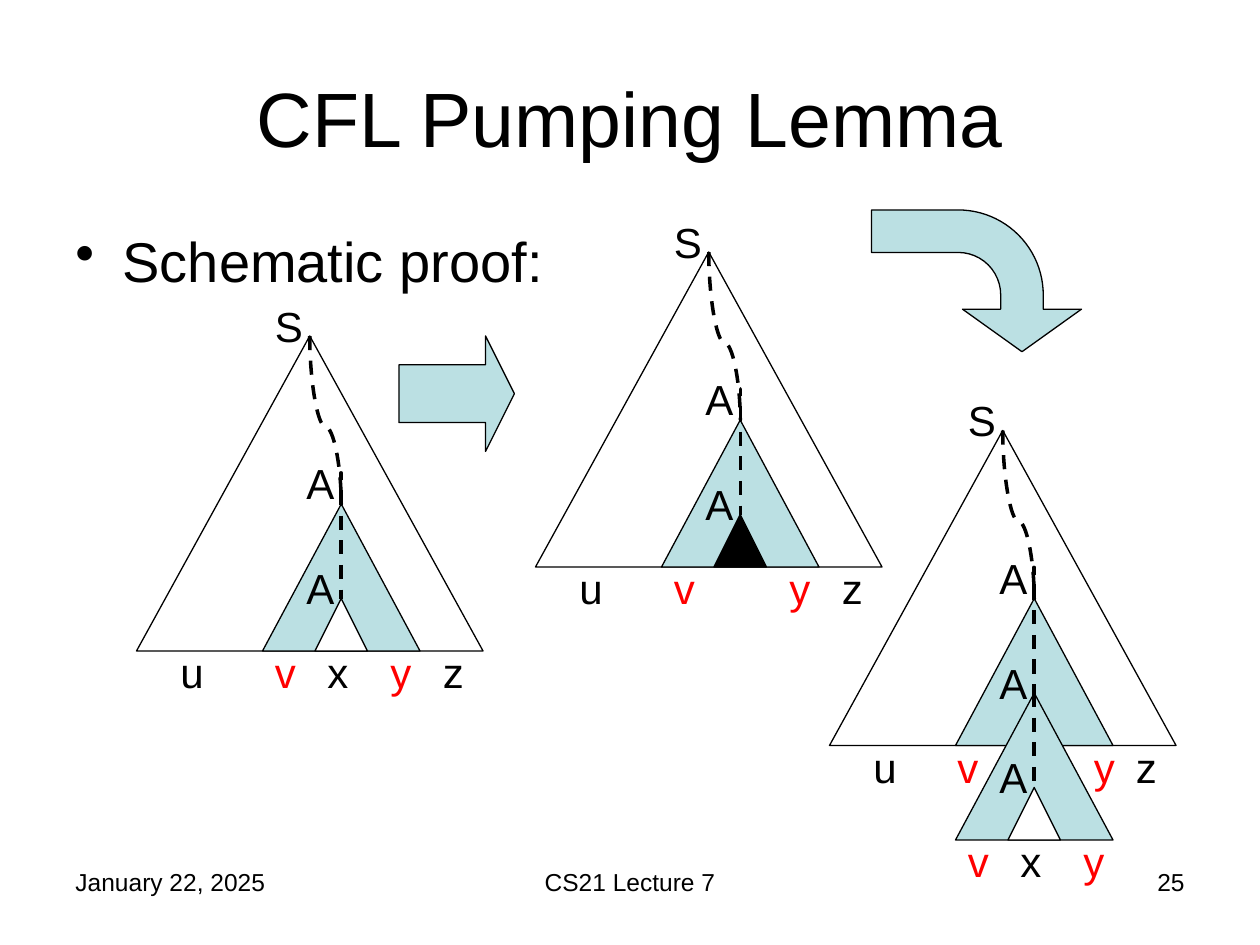
from lxml import etree
from pptx import Presentation, util as u
from pptx.dml.color import RGBColor
from pptx.enum import dml, shapes, text
from pptx.oxml.ns import qn

BLACK, WHITE, RED, TEAL = "000000", "FFFFFF", "FF0000", "BBE0E3"
SHAPE = shapes.MSO_SHAPE
ALIGN = text.PP_ALIGN


def color(value):
    """Return the colour for a hex string."""
    return RGBColor.from_string(value)


def add_text(slide, words, box, size, fill=BLACK, align=ALIGN.LEFT,
             anchor=text.MSO_ANCHOR.TOP):
    """Add a one-run text box and return its paragraph."""
    shape = slide.shapes.add_textbox(*map(u.Pt, box))
    frame = shape.text_frame
    frame.word_wrap = True
    frame.vertical_anchor = anchor
    paragraph = frame.paragraphs[0]
    paragraph.alignment = align
    run = paragraph.add_run()
    run.text = words
    run.font.name = "Arial"
    run.font.size = u.Pt(size)
    run.font.color.rgb = color(fill)
    return paragraph


def add_bullet(paragraph, indent):
    """Give a paragraph a round bullet with a hanging indent."""
    properties = paragraph._p.get_or_add_pPr()
    properties.set("marL", str(u.Pt(indent)))
    properties.set("indent", str(-u.Pt(indent)))
    etree.SubElement(properties, qn("a:buChar")).set("char", "•")


def add_outlined(slide, kind, box, fill=None, adjustments=()):
    """Add a thinly outlined preset shape, filled when a colour is given."""
    shape = slide.shapes.add_shape(kind, *map(u.Pt, box))
    shape.shadow.inherit = False
    for index, value in enumerate(adjustments):
        shape.adjustments[index] = value
    if fill:
        shape.fill.solid()
        shape.fill.fore_color.rgb = color(fill)
    else:
        shape.fill.background()
    shape.line.color.rgb = color(BLACK)
    shape.line.width = u.Pt(0.75)
    return shape


def add_path(slide, start, end, bend):
    """Add a dashed curve that leaves and arrives vertically."""
    (x1, y1), (x2, y2) = start, end
    middle_x, middle_y = (x1 + x2) / 2, (y1 + y2) / 2
    half_x, half_y = (x2 - x1) / 2, (y2 - y1) / 2
    connector = slide.shapes.add_connector(
        shapes.MSO_CONNECTOR.CURVE,
        u.Pt(middle_x - half_y), u.Pt(middle_y + half_x),
        u.Pt(middle_x + half_y), u.Pt(middle_y - half_x))
    connector.line.color.rgb = color(BLACK)
    connector.line.width = u.Pt(2)
    connector.line.dash_style = dml.MSO_LINE.DASH
    properties = connector._element.spPr
    properties.find(qn("a:xfrm")).set("rot", "5400000")
    guides = properties.find(qn("a:prstGeom")).get_or_add_avLst()
    guide = etree.SubElement(guides, qn("a:gd"))
    guide.set("name", "adj1")
    guide.set("fmla", f"val {round(bend * 100000)}")
    etree.SubElement(properties, qn("a:effectLst"))


def add_letters(slide, letters, left, top):
    """Add letters at offsets from a corner, with pumped parts in red."""
    for letter, x, y in letters:
        add_text(slide, letter, (left + x, top + y, 30, 36), 24,
                 RED if letter in "vy" else BLACK)


def add_subtree(slide, left, top, tip=None):
    """Add a shaded subtree with an optional smaller tree at its base."""
    add_outlined(slide, SHAPE.ISOSCELES_TRIANGLE, (left, top, 90, 84), TEAL)
    if tip:
        add_outlined(slide, SHAPE.ISOSCELES_TRIANGLE,
                     (left + 30, top + 54, 30, 30), tip)


def add_tree(slide, left, top, leaves, tip=None):
    """Add a parse tree with its repeated variable and yield letters."""
    add_outlined(slide, SHAPE.ISOSCELES_TRIANGLE, (left, top, 198, 180))
    add_subtree(slide, left + 72, top + 96, tip)
    add_letters(slide, [(letter, x, 174) for letter, x in leaves], left, top)
    add_letters(slide, [("S", 72, -24), ("A", 90, 66), ("A", 90, 126)], left, top)
    upper = (left + 117, top + 96)
    add_path(slide, (left + 99, top), upper, 0.54)
    add_path(slide, upper, (left + 117, top + 150), -0.33)


def add_pumped_part(slide, left, top):
    """Add the second copy of the subtree below a tree."""
    add_subtree(slide, left, top, WHITE)
    add_letters(slide, [("v", 0, 78), ("x", 30, 78), ("y", 66, 78), ("A", 18, 30)],
                left, top)
    add_path(slide, (left + 45, top), (left + 45, top + 54), 0.03)


def main():
    """Build the slide and save it."""
    presentation = Presentation()
    presentation.slide_width, presentation.slide_height = u.Pt(720), u.Pt(540)
    slide = presentation.slides.add_slide(presentation.slide_layouts[6])

    add_text(slide, "January 22, 2025", (36, 492, 168, 37.5), 14)
    add_text(slide, "CS21 Lecture 7", (246, 492, 228, 37.5), 14, align=ALIGN.CENTER)
    add_text(slide, "25", (516, 492, 168, 37.5), 14, align=ALIGN.RIGHT)
    add_text(slide, "CFL Pumping Lemma", (36, 21.5, 648, 90), 44,
             align=ALIGN.CENTER, anchor=text.MSO_ANCHOR.MIDDLE)
    add_bullet(add_text(slide, "Schematic proof:", (36, 126, 648, 54), 32), 27)

    add_tree(slide, 78, 192,
             [("u", 18), ("v", 72), ("x", 102), ("y", 138), ("z", 168)], WHITE)
    add_tree(slide, 306, 144, [("u", 18), ("v", 72), ("y", 138), ("z", 168)], BLACK)
    add_tree(slide, 474, 246, [("u", 18), ("v", 66), ("y", 144), ("z", 168)])

    add_outlined(slide, SHAPE.RIGHT_ARROW, (228, 192, 66, 66), TEAL, (0.5, 0.25))
    bent_arrow = add_outlined(slide, SHAPE.BENT_ARROW, (517.5, 100.5, 81, 120), TEAL,
                              (0.3, 0.42, 0.3, 0.6))
    bent_arrow.rotation = 90
    add_pumped_part(slide, 546, 396)

    presentation.save("out.pptx")


if __name__ == "__main__":
    main()
